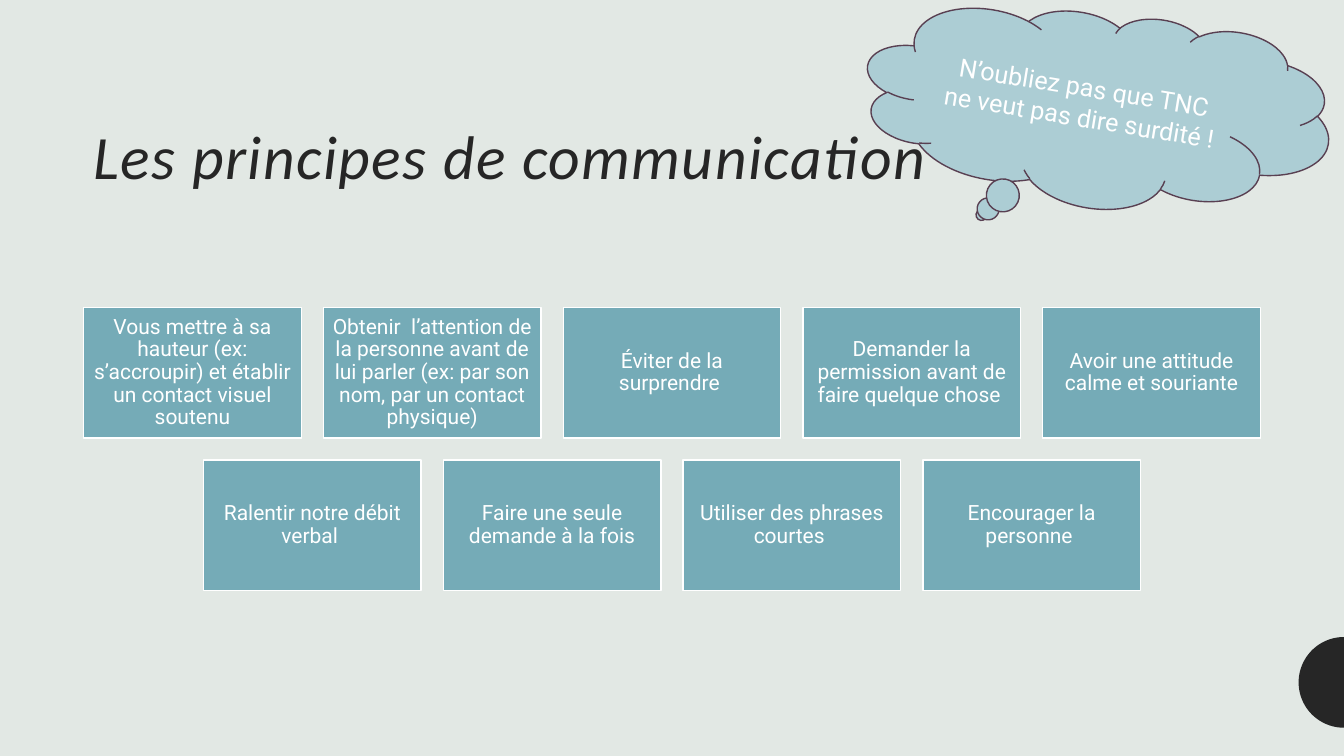
from math import cos, pi, sin

from pptx import Presentation
from pptx.dml.color import RGBColor
from pptx.enum.shapes import MSO_SHAPE as Preset
from pptx.enum.text import MSO_ANCHOR as Anchor, MSO_AUTO_SIZE as AutoSize, PP_ALIGN as Align
from pptx.util import Inches, Pt

COLORS = {
    "background": "E2E8E4",
    "dark": "262626",
    "card": "75ABB7",
    "cloud": "ACCDD4",
    "cloud_line": "594052",
    "white": "FFFFFF",
}
SLIDE_WIDTH, SLIDE_HEIGHT = 13.33, 7.5
PRINCIPLES = [
    [
        "Vous mettre à sa hauteur (ex: s’accroupir) et établir un contact visuel soutenu",
        "Obtenir  l’attention de la personne avant de lui parler "
        "(ex: par son nom, par un contact physique)",
        "Éviter de la surprendre ",
        "Demander la permission avant de faire quelque chose ",
        "Avoir une attitude calme et souriante",
    ],
    [
        "Ralentir notre débit verbal ",
        "Faire une seule demande à la fois",
        "Utiliser des phrases courtes ",
        "Encourager la personne ",
    ],
]


def color(name):
    return RGBColor.from_string(COLORS[name])


def paint(shape, fill, line=None):
    shape.shadow.inherit = False
    shape.fill.solid()
    shape.fill.fore_color.rgb = color(fill)
    if line:
        shape.line.color.rgb = color(line)
        shape.line.width = Pt(1)
    else:
        shape.line.fill.background()


def write(shape, text, *, size, font="Roboto", fill="white", align=Align.CENTER,
          anchor=Anchor.MIDDLE, line_spacing=None, margin=None, italic=False, tracking=0):
    """Fill a shape with one formatted paragraph; margin in inches, tracking in points."""
    frame = shape.text_frame
    frame.word_wrap = True
    frame.auto_size = AutoSize.NONE
    frame.vertical_anchor = anchor
    if margin is not None:
        frame.margin_left = frame.margin_right = Inches(margin)
        frame.margin_top = frame.margin_bottom = Inches(margin)
    paragraph = frame.paragraphs[0]
    paragraph.alignment = align
    if line_spacing:
        paragraph.line_spacing = line_spacing
    run = paragraph.add_run()
    run.text = text
    run.font.name = font
    run.font.size = Pt(size)
    run.font.italic = italic
    run.font.color.rgb = color(fill)
    if tracking:
        run.font._element.set("spc", str(tracking * 100))


def place_title(slide, left, top, width, height):
    title = slide.shapes.title
    title.left, title.top = Inches(left), Inches(top)
    title.width, title.height = Inches(width), Inches(height)
    write(title, "Les principes de communication", size=44, font="Calibri", fill="dark",
          align=Align.LEFT, anchor=Anchor.BOTTOM, line_spacing=0.9, italic=True, tracking=1)


def add_edge_half_disc(slide, center_x, center_y, radius, steps=48):
    """Draw the left half of a disc whose flat side lies on the slide edge."""
    angles = [pi / 2 + pi * step / steps for step in range(steps + 1)]
    points = [(Inches(center_x + radius * cos(angle)), Inches(center_y + radius * sin(angle)))
              for angle in angles]
    builder = slide.shapes.build_freeform(*points[0])
    builder.add_line_segments(points[1:], close=True)
    paint(builder.convert_to_shape(), "dark")


def add_principles(slide, left, top, width, height):
    """Lay out the cards in rows, each row centred in the box."""
    gap = 0.22
    columns = max(len(row) for row in PRINCIPLES)
    card_width = (width - gap * (columns - 1)) / columns
    card_height = (height - gap * (len(PRINCIPLES) - 1)) / len(PRINCIPLES)
    for row_index, row in enumerate(PRINCIPLES):
        row_width = len(row) * (card_width + gap) - gap
        row_left = left + (width - row_width) / 2
        for column, text in enumerate(row):
            card = slide.shapes.add_shape(
                Preset.RECTANGLE,
                Inches(row_left + column * (card_width + gap)),
                Inches(top + row_index * (card_height + gap)),
                Inches(card_width), Inches(card_height))
            paint(card, "card", "white")
            write(card, text, size=15, line_spacing=0.9, margin=0.06)


def add_reminder_cloud(slide, left, top, width, height):
    cloud = slide.shapes.add_shape(Preset.CLOUD_CALLOUT, Inches(left), Inches(top),
                                   Inches(width), Inches(height))
    cloud.rotation = 9.3
    paint(cloud, "cloud", "cloud_line")
    write(cloud, "N’oubliez pas que TNC ne veut pas dire surdité !", size=18)


def main():
    presentation = Presentation()
    presentation.slide_width = Inches(SLIDE_WIDTH)
    presentation.slide_height = Inches(SLIDE_HEIGHT)
    slide = presentation.slides.add_slide(presentation.slide_layouts.get_by_name("Title Only"))
    slide.background.fill.solid()
    slide.background.fill.fore_color.rgb = color("background")
    place_title(slide, 0.83, 0.46, 11.67, 1.5)
    add_edge_half_disc(slide, SLIDE_WIDTH, 6.77, 0.45)
    add_principles(slide, 0.83, 3.05, 11.67, 2.81)
    add_reminder_cloud(slide, 8.57, 0.1, 4.63, 1.96)
    presentation.save("out.pptx")


if __name__ == "__main__":
    main()
